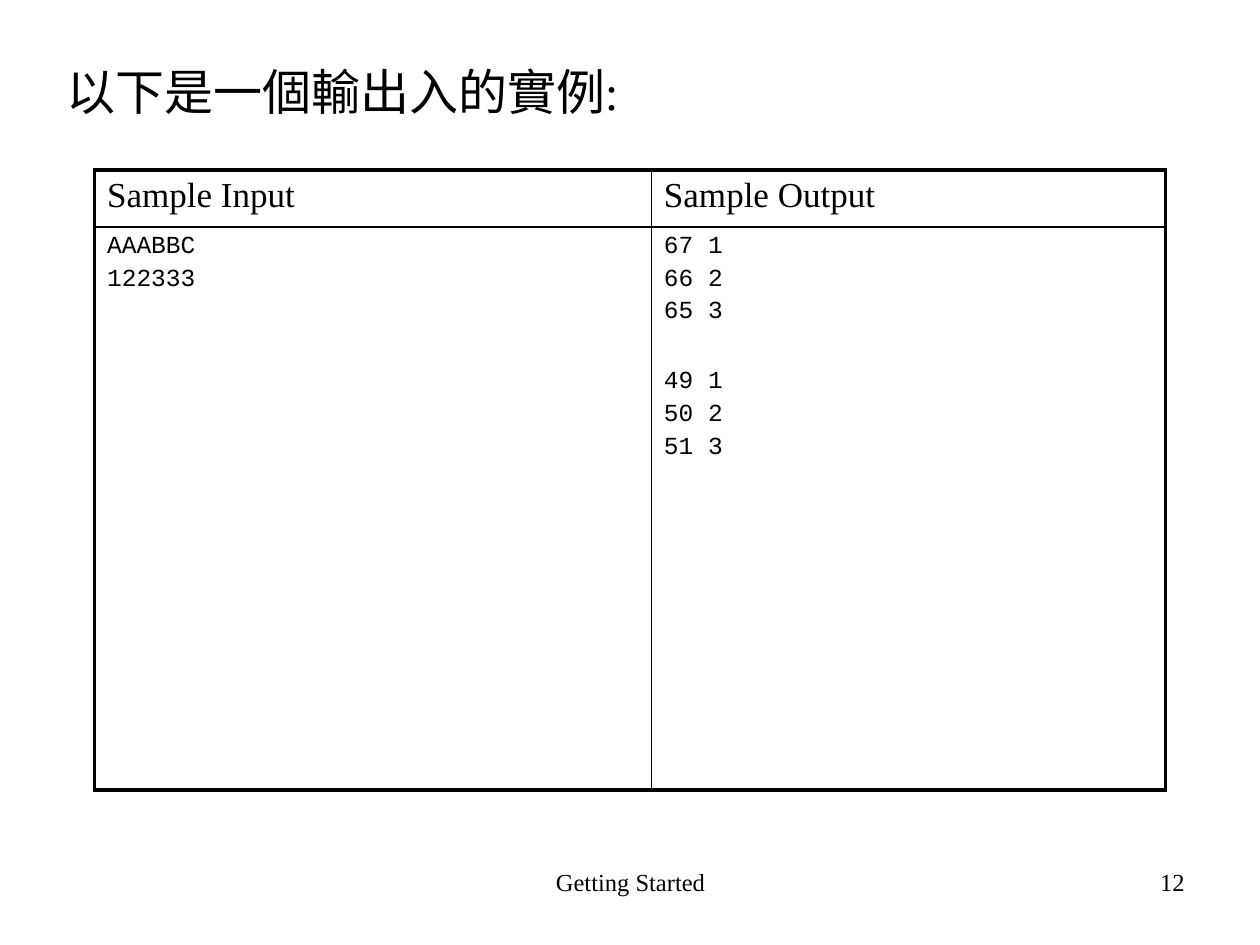
"""Build a slide with a table of sample input and output."""
from lxml import etree
from pptx import Presentation
from pptx.dml.color import RGBColor
from pptx.enum.text import MSO_ANCHOR, PP_ALIGN
from pptx.oxml.ns import qn
from pptx.util import Inches, Pt

LEFT, CENTER, RIGHT = PP_ALIGN.LEFT, PP_ALIGN.CENTER, PP_ALIGN.RIGHT
TOP = MSO_ANCHOR.TOP
BLACK = "000000"
SERIF, MONO = "Times New Roman", "Courier New"


def write(frame, text, size=14, font=SERIF, color=BLACK, align=LEFT, lead=0):
    frame.word_wrap = True
    frame.vertical_anchor = TOP
    blocks = text.split("\n\n")
    lines = [(line, b > 0 and n == 0) for b, block in enumerate(blocks)
             for n, line in enumerate(block.split("\n"))]
    for i, (line, apart) in enumerate(lines):
        para = frame.paragraphs[0] if i == 0 else frame.add_paragraph()
        para.alignment = align
        para.space_before = Pt(lead + (1.33 * size + 2.8 if apart else 0))
        run = para.add_run()
        run.text = line
        run.font.size = Pt(size)
        run.font.name = font
        run.font.bold = False
        run.font.color.rgb = RGBColor.from_string(color)


def edge(cell, side, width, color=BLACK):
    props = cell._tc.get_or_add_tcPr()
    line = etree.SubElement(props, qn(f"a:ln{side}"), w=str(Pt(width)))
    fill = etree.SubElement(line, qn("a:solidFill"))
    etree.SubElement(fill, qn("a:srgbClr"), val=color)


deck = Presentation()
deck.slide_width, deck.slide_height = Inches(10), Inches(7.5)
slide = deck.slides.add_slide(deck.slide_layouts[5])

title = slide.shapes.title
title.left, title.top = Inches(0.43), Inches(0.44)
title.width, title.height = Inches(9), Inches(0.75)
write(title.text_frame, "以下是一個輸出入的實例:", size=28)

rows = [
    ("Sample Input", "Sample Output"),
    ("AAABBC\n122333", "67 1\n66 2\n65 3\n\n49 1\n50 2\n51 3"),
]
styles = [(20, SERIF), (14, MONO)]
table = slide.shapes.add_table(
    2, 2, Inches(0.75), Inches(1.35), Inches(8.5), Inches(4.92)).table
table.first_row = table.horz_banding = False
for col, width in zip(table.columns, (4.42, 4.08)):
    col.width = Inches(width)
for row, height in zip(table.rows, (0.45, 4.47)):
    row.height = Inches(height)

for r, (row, (size, font)) in enumerate(zip(rows, styles)):
    for c, text in enumerate(row):
        cell = table.cell(r, c)
        write(cell.text_frame, text, size=size, font=font, lead=0.2 * size)
        outer = {"L": c == 0, "R": c == 1, "T": r == 0, "B": r == 1}
        for side, thick in outer.items():
            edge(cell, side, 2.25 if thick else 1)
        cell.fill.background()

feet = [("Getting Started", 3.42, 3.17, CENTER), ("12", 7.17, 2.33, RIGHT)]
for text, left, width, align in feet:
    box = slide.shapes.add_textbox(
        Inches(left), Inches(6.83), Inches(width), Inches(0.52))
    write(box.text_frame, text, align=align)

deck.save("out.pptx")
